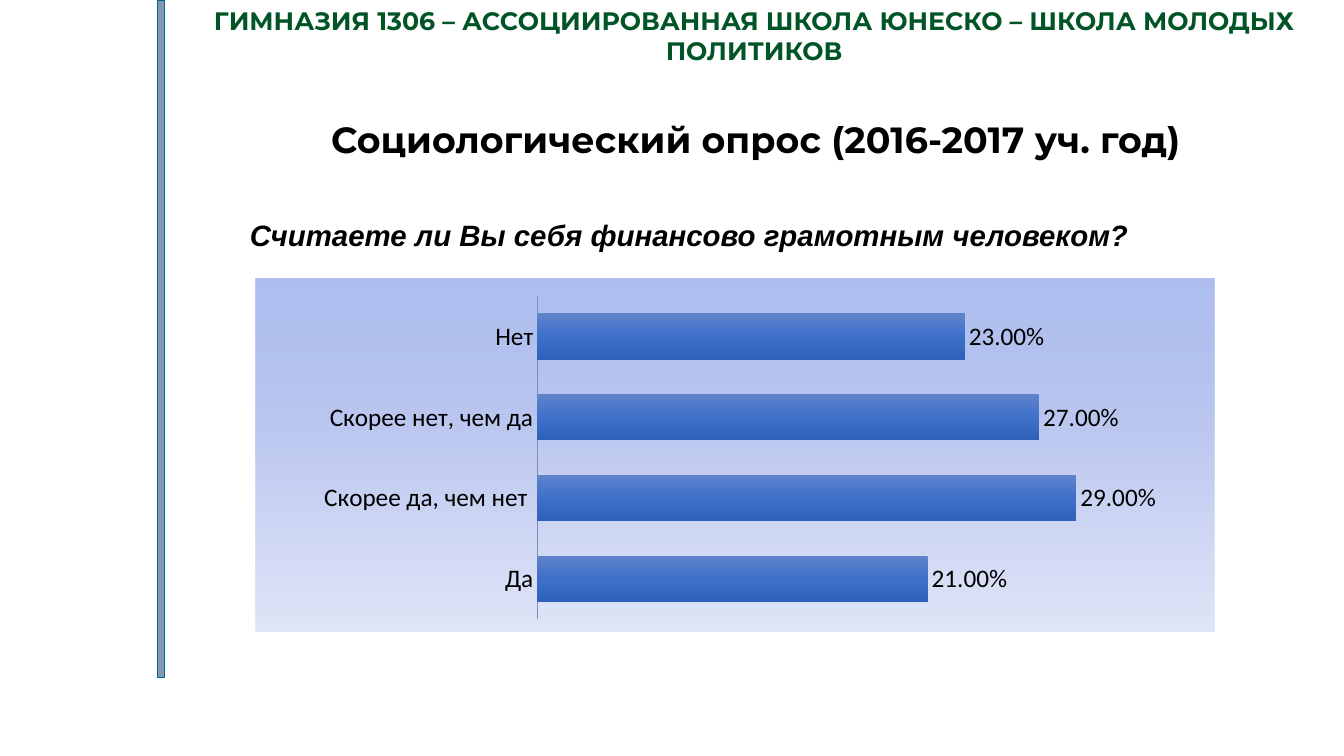
from lxml import etree
from pptx import Presentation
from pptx.chart.data import CategoryChartData
from pptx.dml.color import RGBColor
from pptx.enum.chart import XL_CHART_TYPE, XL_LABEL_POSITION, XL_TICK_MARK
from pptx.enum.shapes import MSO_SHAPE
from pptx.enum.text import MSO_ANCHOR, MSO_AUTO_SIZE, PP_ALIGN
from pptx.oxml import parse_xml
from pptx.oxml.ns import nsdecls, qn
from pptx.util import Inches, Pt

BAR_CLUSTERED = XL_CHART_TYPE.BAR_CLUSTERED
OUTSIDE_END = XL_LABEL_POSITION.OUTSIDE_END
NO_TICKS = XL_TICK_MARK.NONE
RECTANGLE = MSO_SHAPE.RECTANGLE
TOP = MSO_ANCHOR.TOP
NO_AUTOFIT = MSO_AUTO_SIZE.NONE
LEFT, CENTER = PP_ALIGN.LEFT, PP_ALIGN.CENTER

COLORS = {
    "black": "000000",
    "school": "005426",
    "stripe": "8497B0",
    "stripe_line": "006699",
    "axis": "7F8FB8",
}
CHART_STOPS = [(0, "96ABEA", 77), (50, "C0CBF0", 100), (100, "E0E5F7", 100)]
BAR_STOPS = [(0, "6083CB", 100), (50, "3E70CA", 100), (100, "2E61BA", 100)]
PERCENT = "0.00%"
ANSWERS = {
    "Да": 0.21,
    "Скорее да, чем нет ": 0.29,
    "Скорее нет, чем да": 0.27,
    "Нет": 0.23,
}


def color(name):
    return RGBColor.from_string(COLORS[name])


def fill_text(shape, text, font_name, size, color_name, align, line_spacing, italic=False):
    frame = shape.text_frame
    frame.word_wrap = True
    frame.auto_size = NO_AUTOFIT
    frame.vertical_anchor = TOP
    frame.text = text
    paragraph = frame.paragraphs[0]
    paragraph.alignment = align
    paragraph.line_spacing = line_spacing
    paragraph.space_before = Pt(0)
    font = paragraph.font
    font.name = font_name
    font.size = Pt(size)
    font.bold = True
    font.italic = italic
    font.color.rgb = color(color_name)


def add_text(slide, box, *style, **options):
    shape = slide.shapes.add_textbox(*map(Inches, box))
    fill_text(shape, *style, **options)


def add_title(slide, box, *style):
    title = slide.shapes.title
    title.left, title.top, title.width, title.height = map(Inches, box)
    fill_text(title, *style)


def add_stripe(slide, box):
    stripe = slide.shapes.add_shape(RECTANGLE, *map(Inches, box))
    stripe.shadow.inherit = False
    stripe.fill.solid()
    stripe.fill.fore_color.rgb = color("stripe")
    stripe.line.color.rgb = color("stripe_line")
    stripe.line.width = Pt(1)


def gradient_fill(stops):
    stop_xml = "".join(
        f'<a:gs pos="{position * 1000}"><a:srgbClr val="{value}">'
        f'<a:alpha val="{alpha * 1000}"/></a:srgbClr></a:gs>'
        for position, value, alpha in stops
    )
    return parse_xml(
        f'<a:gradFill {nsdecls("a")} rotWithShape="1"><a:gsLst>{stop_xml}</a:gsLst>'
        '<a:lin ang="5400000" scaled="0"/></a:gradFill>'
    )


def set_chart_background(chart):
    properties = parse_xml(f'<c:spPr {nsdecls("a", "c")}><a:ln><a:noFill/></a:ln></c:spPr>')
    properties.insert(0, gradient_fill(CHART_STOPS))
    chart._chartSpace.find(qn("c:chart")).addnext(properties)


def set_plot_layout(chart, x, y, w, h):
    plot_area = chart._chartSpace.find(qn("c:chart")).find(qn("c:plotArea"))
    layout = plot_area.find(qn("c:layout"))
    if layout is None:
        layout = etree.Element(qn("c:layout"))
        plot_area.insert(0, layout)
    manual = etree.SubElement(layout, qn("c:manualLayout"))
    settings = {"layoutTarget": "inner", "xMode": "edge", "yMode": "edge",
                "x": x, "y": y, "w": w, "h": h}
    for tag, value in settings.items():
        etree.SubElement(manual, qn(f"c:{tag}")).set("val", str(value))


def add_answer_chart(slide, box):
    data = CategoryChartData(number_format=PERCENT)
    data.categories = list(ANSWERS)
    data.add_series("Series 1", list(ANSWERS.values()))
    chart = slide.shapes.add_chart(BAR_CLUSTERED, *map(Inches, box), data).chart
    chart.has_legend = False
    chart.has_title = False
    chart.font.name = "Calibri"
    chart.font.size = Pt(18)
    chart.font.color.rgb = color("black")

    chart.category_axis.major_tick_mark = NO_TICKS
    chart.category_axis.format.line.color.rgb = color("axis")
    chart.value_axis.minimum_scale = 0
    chart.value_axis.maximum_scale = 0.35
    chart.value_axis.has_major_gridlines = False
    chart.value_axis.visible = False

    plot = chart.plots[0]
    plot.gap_width = 75
    plot.vary_by_categories = False
    plot.has_data_labels = True
    labels = plot.data_labels
    labels.show_value = True
    labels.number_format = PERCENT
    labels.number_format_is_linked = False
    labels.position = OUTSIDE_END

    series = plot.series[0]
    series.invert_if_negative = False
    series._element.get_or_add_spPr().insert(0, gradient_fill(BAR_STOPS))
    set_chart_background(chart)
    set_plot_layout(chart, 0.294, 0.051, 0.678, 0.913)


def main():
    presentation = Presentation()
    presentation.slide_width = Inches(13.33)
    presentation.slide_height = Inches(7.5)
    slide = presentation.slides.add_slide(presentation.slide_layouts[5])
    add_text(slide, (1.63, 0, 11.7, 0.71),
             "ГИМНАЗИЯ 1306 – АССОЦИИРОВАННАЯ ШКОЛА ЮНЕСКО – ШКОЛА МОЛОДЫХ ПОЛИТИКОВ",
             "Montserrat", 18, "school", CENTER, 1.0)
    add_stripe(slide, (1.56, 0, 0.07, 6.72))
    add_text(slide, (2.38, 2.14, 10.95, 0.48),
             "Считаете ли Вы себя финансово грамотным человеком?",
             "Arial", 21, "black", LEFT, 0.9, italic=True)
    add_title(slide, (1.66, 1.16, 11.68, 0.58),
              "Социологический опрос (2016-2017 уч. год)",
              "Montserrat", 26, "black", CENTER, 0.9)
    add_answer_chart(slide, (2.53, 2.76, 9.52, 3.51))
    presentation.save("out.pptx")


if __name__ == "__main__":
    main()
